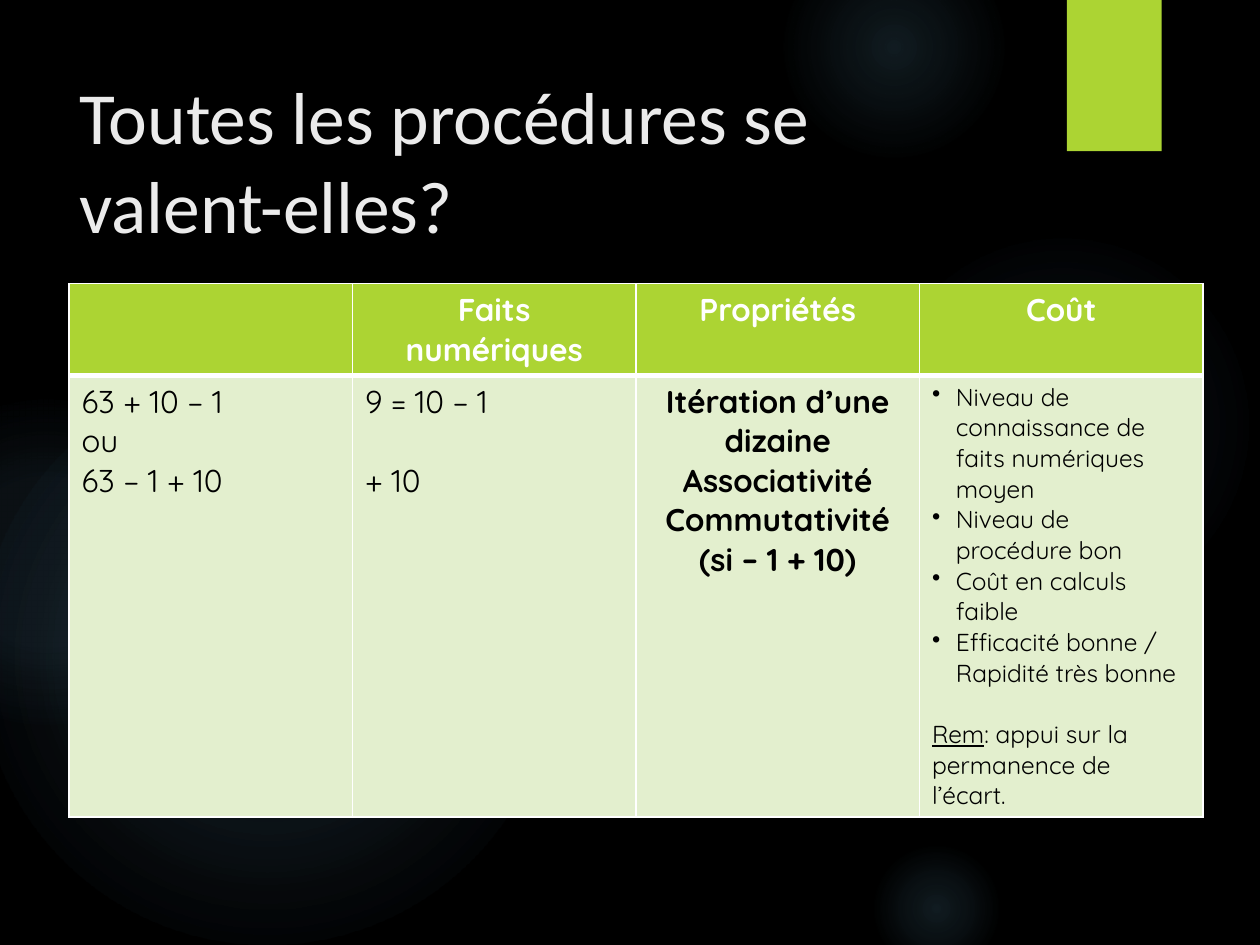
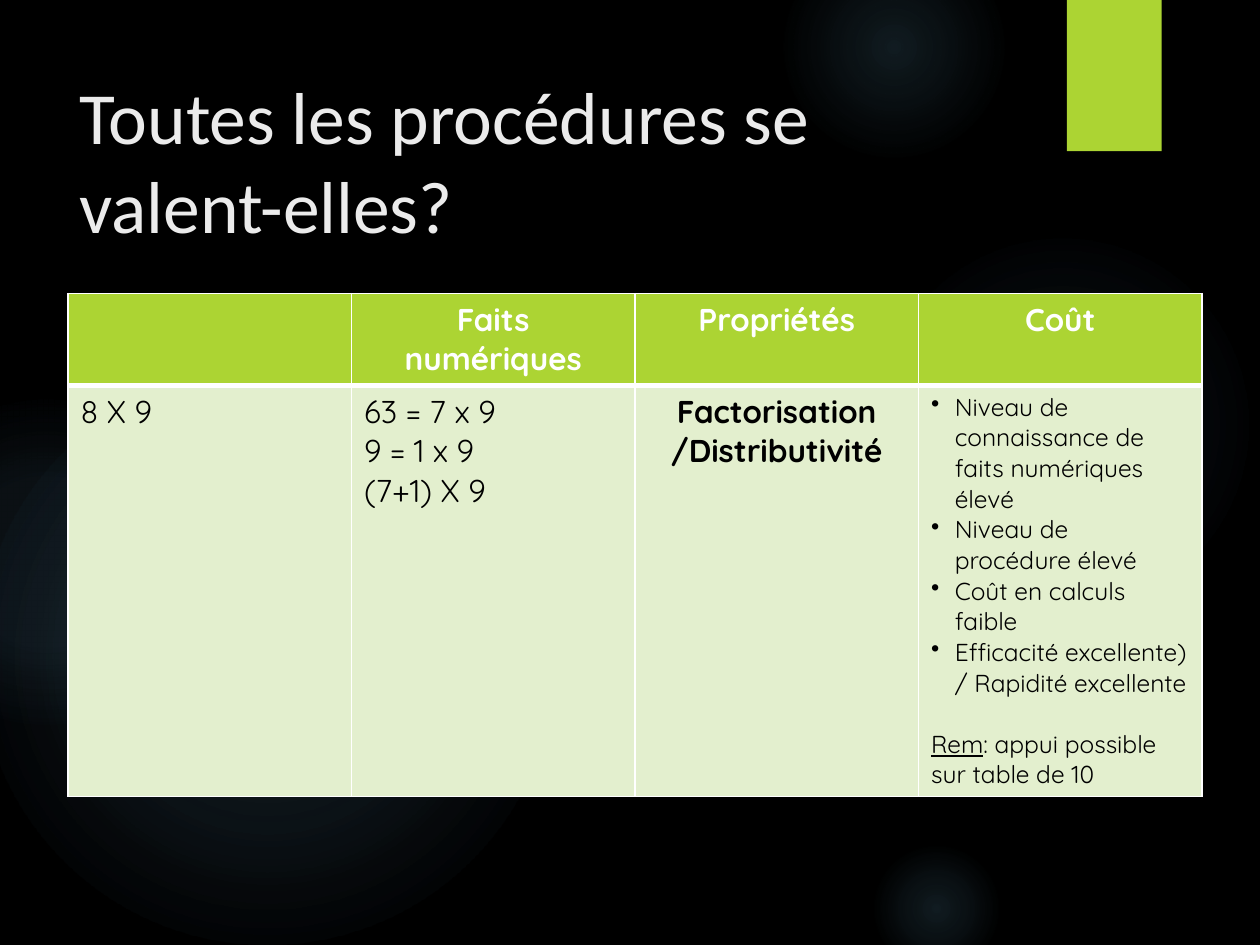
import lxml.etree
import pptx
import pptx.dml.color
import pptx.enum.shapes
import pptx.enum.text
import pptx.oxml
import pptx.oxml.ns
import pptx.util

Cm, Pt = pptx.util.Cm, pptx.util.Pt
RGBColor = pptx.dml.color.RGBColor
PP_ALIGN = pptx.enum.text.PP_ALIGN
MSO_SHAPE = pptx.enum.shapes.MSO_SHAPE
qn = pptx.oxml.ns.qn

COLORS = {
    "background": "000000",
    "glow": "7AC4F0",
    "accent": "ACD433",
    "title": "EBEBEB",
    "header text": "FFFFFF",
    "border": "FFFFFF",
    "body": "E3EFCE",
    "body text": "000000",
}
TITLE = "Toutes les procédures se valent-elles?"
HEADERS = ["", "Faits numériques", "Propriétés", "Coût"]

# Left, top, diameter in cm, then (position, opacity) stops in percent
GLOWS = [
    (17.5, 4.65, 7.82, [(0, 7), (36, 6), (69, 0)]),
    (15.8, -1.27, 4.45, [(0, 14), (36, 7), (73, 0)]),
    (17.5, 16.94, 2.74, [(0, 14), (36, 7), (66, 0)]),
    (-0.43, 7.42, 11.63, [(0, 11), (36, 10), (75, 0)]),
    (-2.34, 8.05, 6.55, [(0, 8), (36, 8), (72, 0)]),
]

# A "gap" is the index of the line of facts that has a line's space above it
PAGES = [
    {
        "left": 1.39, "top": 5.72, "body height": 7.06,
        "calculation": ["63 + 10 – 1", "ou", "63 – 1 + 10"],
        "facts": ["9 = 10 – 1", "+ 10"],
        "gap": 1,
        "properties": ["Itération d’une dizaine", "Associativité",
                       "Commutativité (si – 1 + 10)"],
        "costs": ["Niveau de connaissance de faits numériques moyen",
                  "Niveau de procédure bon",
                  "Coût en calculs faible",
                  "Efficacité bonne / Rapidité très bonne"],
        "remark": ": appui sur la permanence de l’écart.",
    },
    {
        "left": 1.37, "top": 5.92, "body height": 6.6,
        "calculation": ["8 X 9"],
        "facts": ["63 = 7 x 9", "9 = 1 x 9", "(7+1) X 9"],
        "gap": None,
        "properties": ["Factorisation /Distributivité"],
        "costs": ["Niveau de connaissance de faits numériques élevé",
                  "Niveau de procédure élevé",
                  "Coût en calculs faible",
                  "Efficacité excellente) / Rapidité excellente"],
        "remark": ": appui possible sur table de 10",
    },
]


def write_lines(cell, lines, size=18, color="body text", bold=False, alignment=PP_ALIGN.LEFT):
    """Fill a cell with one paragraph per line and return the paragraphs."""
    cell.text = "\n".join(lines)
    for paragraph in cell.text_frame.paragraphs:
        paragraph.alignment = alignment
        paragraph.font.name = "Quicksand"
        paragraph.font.size = Pt(size)
        paragraph.font.bold = bold
        paragraph.font.color.rgb = RGBColor.from_string(COLORS[color])
    return cell.text_frame.paragraphs


def style_cell(cell, fill, top, bottom):
    """Set the fill of a cell and its borders (widths in points)."""
    properties = cell._tc.get_or_add_tcPr()
    for side, width in (("lnL", 1), ("lnR", 1), ("lnT", top), ("lnB", bottom)):
        line = lxml.etree.SubElement(properties, qn("a:" + side), w=str(Pt(width)))
        solid = lxml.etree.SubElement(line, qn("a:solidFill"))
        lxml.etree.SubElement(solid, qn("a:srgbClr"), val=COLORS["border"])
    cell.fill.solid()
    cell.fill.fore_color.rgb = RGBColor.from_string(COLORS[fill])


presentation = pptx.Presentation()
presentation.slide_width, presentation.slide_height = Cm(25.4), Cm(19.05)
layout = presentation.slide_layouts.get_by_name("Title Only")
slides = [presentation.slides.add_slide(layout) for page in PAGES]

# Shared backdrop: black, glows and corner band, placed on the layout
layout.background.fill.solid()
layout.background.fill.fore_color.rgb = RGBColor.from_string(COLORS["background"])
backdrop = []
for left, top, diameter, stops in GLOWS:
    glow = slides[0].shapes.add_shape(
        MSO_SHAPE.OVAL, Cm(left), Cm(top), Cm(diameter), Cm(diameter))
    stop_xml = "".join(
        f'<a:gs pos="{position * 1000}"><a:srgbClr val="{COLORS["glow"]}">'
        f'<a:alpha val="{opacity * 1000}"/></a:srgbClr></a:gs>'
        for position, opacity in stops)
    gradient = pptx.oxml.parse_xml(
        f'<a:gradFill {pptx.oxml.ns.nsdecls("a")} rotWithShape="1"><a:gsLst>{stop_xml}</a:gsLst>'
        '<a:path path="circle"><a:fillToRect l="50000" t="50000" r="50000" b="50000"/>'
        '</a:path></a:gradFill>')
    glow.element.spPr.insert(2, gradient)
    backdrop.append(glow)

band = slides[0].shapes.add_shape(MSO_SHAPE.RECTANGLE, Cm(21.51), 0, Cm(1.91), Cm(3.05))
band.fill.solid()
band.fill.fore_color.rgb = RGBColor.from_string(COLORS["accent"])
backdrop.append(band)

for index, shape in enumerate(backdrop):
    shape.line.fill.background()
    shape.shadow.inherit = False
    layout.shapes.element.insert(2 + index, shape.element)

for slide, page in zip(slides, PAGES):
    # Title
    title = slide.shapes.title
    title.left, title.top, title.width, title.height = Cm(1.35), Cm(1.27), Cm(19.6), Cm(3.89)
    title.text = TITLE
    title.text_frame.word_wrap = True
    title.text_frame.auto_size = pptx.enum.text.MSO_AUTO_SIZE.NONE
    title.text_frame.vertical_anchor = pptx.enum.text.MSO_ANCHOR.MIDDLE
    paragraph = title.text_frame.paragraphs[0]
    paragraph.alignment = PP_ALIGN.LEFT
    paragraph.font.name = "Calibri"
    paragraph.font.size = Pt(42)
    paragraph.font.color.rgb = RGBColor.from_string(COLORS["title"])

    # Table frame, header row and cell styles
    frame = slide.shapes.add_table(
        2, len(HEADERS), Cm(page["left"]), Cm(page["top"]), Cm(22.86), Cm(9.68))
    table = frame.table
    table.horz_banding = False
    table.rows[0].height = Cm(1.12)
    table.rows[1].height = Cm(page["body height"])
    frame.height = Cm(9.68)
    for column, header in enumerate(HEADERS):
        style_cell(table.cell(0, column), "accent", 1, 3)
        style_cell(table.cell(1, column), "body", 3, 1)
        write_lines(table.cell(0, column), [header], color="header text", bold=True,
                    alignment=PP_ALIGN.CENTER)

    # Calculation, number facts and properties
    write_lines(table.cell(1, 0), page["calculation"])
    facts = write_lines(table.cell(1, 1), page["facts"])
    if page["gap"] is not None:
        facts[page["gap"]].space_before = Pt(22.5)
    write_lines(table.cell(1, 2), page["properties"], bold=True, alignment=PP_ALIGN.CENTER)

    # Bulleted costs, then the remark with its underlined label
    *costs, remark = write_lines(table.cell(1, 3), page["costs"] + ["Rem"], size=14)
    for paragraph in costs:
        properties = paragraph._p.get_or_add_pPr()
        properties.set("marL", str(Cm(0.48)))
        properties.set("indent", str(-Cm(0.48)))
        bullet = lxml.etree.Element(qn("a:buChar"), char="•")
        properties.find(qn("a:defRPr")).addprevious(bullet)
    remark.space_before = Pt(17.5)
    remark.runs[0].font.underline = True
    remark.add_run().text = page["remark"]

presentation.save("out.pptx")
